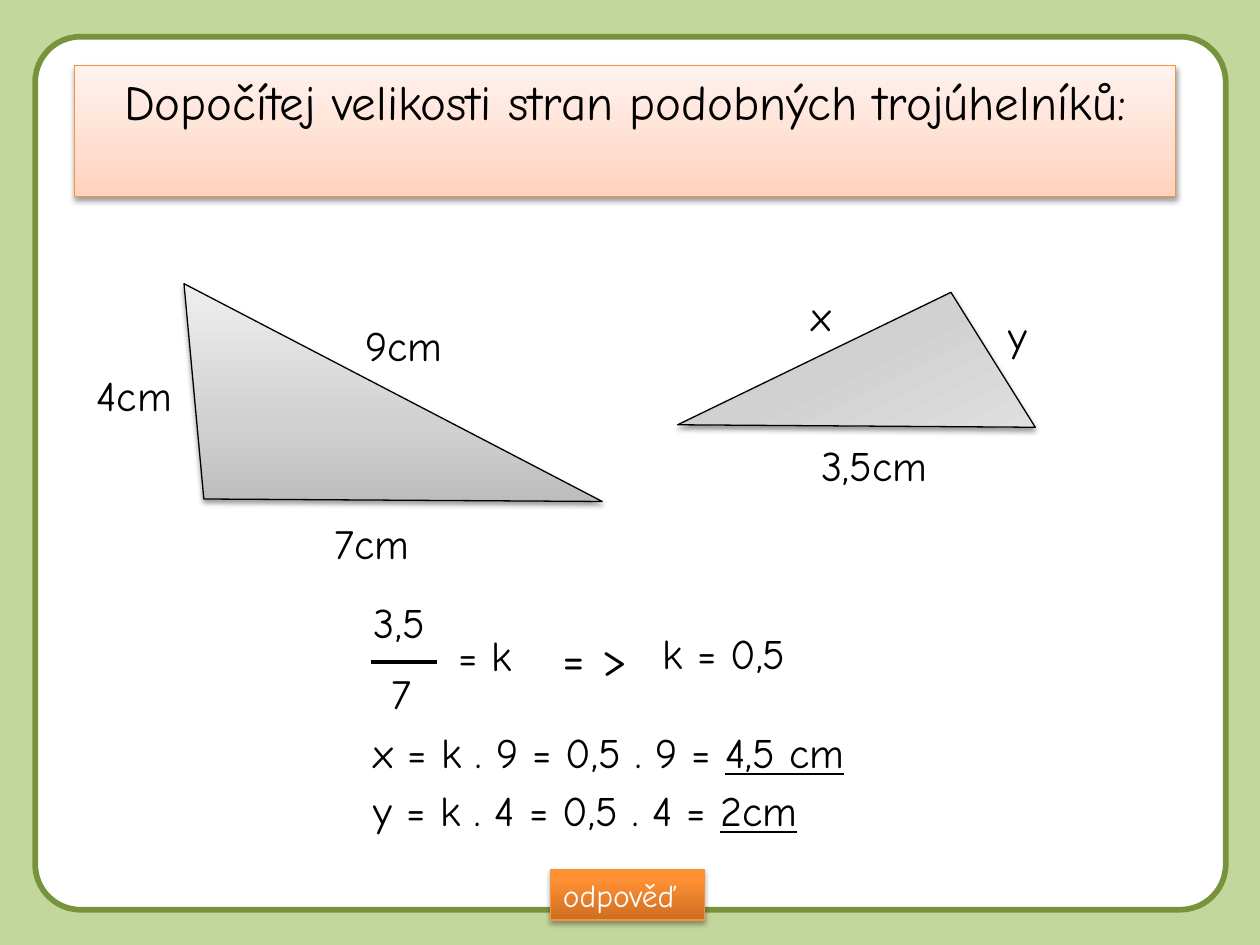
import math
from dataclasses import dataclass
from typing import Any, NamedTuple, Optional

from lxml import etree
from pptx import Presentation
from pptx.dml.color import RGBColor
from pptx.enum import shapes, text
from pptx.oxml import ns
from pptx.util import Cm, Pt


@dataclass(frozen=True)
class Theme:
    font: str = "Comic Neue"
    back: str = "C3D69B"
    edge: str = "77933C"
    white: str = "FFFFFF"
    black: str = "000000"
    rim: str = "F69240"
    peach: tuple = ((0, "FFD2BD"), (35, "FFDED0"), (100, "FFF2ED"))
    gray: tuple = ((0, "BDBDBD"), (35, "D1D1D1"), (100, "EEEEEE"))
    flame: tuple = ((0, "CC6E20"), (80, "FF9034"), (100, "FF9136"))
    head: int = 28
    body: int = 24
    small: int = 18


class Label(NamedTuple):
    words: str
    left: float
    top: float
    width: float
    high: float = 1.27
    filled: bool = True
    size: int = Theme.body


class Shade(NamedTuple):
    alpha: int = 38
    dist: float = 1.6


T = Theme()
SHADE = Shade()
RECT = shapes.MSO_SHAPE.RECTANGLE


def tint(code: str) -> RGBColor:
    return RGBColor.from_string(code)


def apply(item: Any, style: dict) -> None:
    for name, value in style.items():
        setattr(item, name, value)


def node(base: Any, tag: str, **attrs: Any) -> Any:
    return etree.SubElement(base, ns.qn(tag), {k: str(v) for k, v in attrs.items()})


def paint(shape: Any, fill: Any, line: Optional[str] = None,
          width: float = 0.75, shade: Optional[Shade] = None) -> None:
    """Fill with one colour or with stops that rise from the bottom."""
    shape.shadow.inherit = False
    if isinstance(fill, str):
        shape.fill.solid()
        shape.fill.fore_color.rgb = tint(fill)
    else:
        shape.fill.gradient()
        shape.fill.gradient_angle = 90
        stops = next(shape.element.iter(ns.qn("a:gsLst")))
        for old in list(stops):
            stops.remove(old)
        for place, code in fill:
            node(node(stops, "a:gs", pos=place * 1000), "a:srgbClr", val=code)
    if line:
        shape.line.color.rgb = tint(line)
        shape.line.width = Pt(width)
    else:
        shape.line.fill.background()
    if shade:
        effects = next(shape.element.iter(ns.qn("a:effectLst")))
        outer = node(effects, "a:outerShdw", blurRad=Pt(3.1), dist=Pt(shade.dist),
                     dir=90 * 60000, rotWithShape=0)
        color = node(outer, "a:srgbClr", val=T.black)
        node(color, "a:alpha", val=shade.alpha * 1000)


def write(shape: Any, rows: list, size: int, color: str = T.black,
          align: Any = text.PP_ALIGN.LEFT, gap: float = 0) -> None:
    """Each row is a list of (words, underlined) pairs."""
    frame = shape.text_frame
    apply(frame, {"word_wrap": True, "vertical_anchor": text.MSO_ANCHOR.TOP})
    for i, row in enumerate(rows):
        para = frame.paragraphs[0] if i == 0 else frame.add_paragraph()
        apply(para, {"alignment": align, "space_before": Pt(gap if i else 0)})
        for words, under in row:
            run = para.add_run()
            run.text = words
            apply(run.font, {"name": T.font, "size": Pt(size), "underline": under})
            run.font.color.rgb = tint(color)


def block(slide: Any, kind: Any, *box: float) -> Any:
    return slide.shapes.add_shape(kind, *map(Cm, box))


def label(slide: Any, item: Label) -> None:
    box = (item.left, item.top, item.width, item.high)
    if item.filled:
        shape = block(slide, RECT, *box)
        paint(shape, T.white)
    else:
        shape = slide.shapes.add_textbox(*map(Cm, box))
    write(shape, [[(item.words, False)]], item.size)


def turn(point: tuple, mid: tuple, angle: float) -> tuple:
    rad = math.radians(angle)
    x, y = point[0] - mid[0], point[1] - mid[1]
    return (mid[0] + x * math.cos(rad) - y * math.sin(rad),
            mid[1] + x * math.sin(rad) + y * math.cos(rad))


def triangle(slide: Any, points: list, mid: tuple = (0, 0), angle: float = 0) -> None:
    """Corners are as seen; the shape itself is turned by angle around mid."""
    first, *rest = [tuple(map(Cm, turn(p, mid, -angle))) for p in points]
    path = slide.shapes.build_freeform(*first)
    path.add_line_segments(rest, close=True)
    shape = path.convert_to_shape()
    shape.rotation = angle
    paint(shape, T.gray, T.black, shade=SHADE)


def main() -> None:
    deck = Presentation()
    apply(deck, {"slide_width": Cm(25.4), "slide_height": Cm(19.05)})
    slide = deck.slides.add_slide(deck.slide_layouts[6])
    slide.background.fill.solid()
    slide.background.fill.fore_color.rgb = tint(T.back)

    # Frame
    frame = block(slide, shapes.MSO_SHAPE.ROUNDED_RECTANGLE, 0.71, 0.74, 24, 17.6)
    frame.adjustments[0] = 0.052
    paint(frame, T.white, T.edge, 3.25)

    # Title
    title = block(slide, RECT, 1.5, 1.32, 22.2, 2.64)
    paint(title, T.peach, T.rim, shade=SHADE)
    write(title, [[("Dopočítej velikosti stran podobných trojúhelníků:", False)]],
          T.head, align=text.PP_ALIGN.CENTER)

    # Side labels, then the triangles over them
    for item in (Label("9cm", 7.11, 6.32, 2.21),
                 Label("4cm", 1.7, 7.32, 3),
                 Label("7cm", 6.5, 10.31, 2.21),
                 Label("3,5cm", 16.31, 8.74, 3.2),
                 Label("x", 16.1, 5.72, 1.19),
                 Label("y", 20.09, 6.12, 1.19)):
        label(slide, item)
    triangle(slide, [(4.11, 10.06), (12.14, 10.11), (3.71, 5.72)])
    triangle(slide, [(19.2, 5.89), (13.69, 8.56), (20.9, 8.61)], (17.28, 8.59), 154)

    # Answer button
    button = block(slide, RECT, 11.1, 17.53, 3.1, 1.02)
    paint(button, T.flame, T.rim, shade=Shade(35, 1.8))
    write(button, [[("odpověď", False)]], T.small, T.white)

    # Results
    work = slide.shapes.add_textbox(*map(Cm, (7.29, 14.53, 10.77, 2.49)))
    write(work, [[("x = k . 9 = 0,5 . 9 = ", False), ("4,5 cm", True)],
                 [("y = k . 4 = 0,5 . 4 = ", False), ("2cm", True)]], T.body, gap=4)

    # Ratio
    for item in (Label("3,5", 7.29, 11.91, 1.85),
                 Label("7", 7.65, 13.34, 1.02),
                 Label("= k", 8.99, 12.57, 2.72),
                 Label("= >", 11.1, 12.52, 2.21, 1.45, False, T.head),
                 Label("k = 0,5", 13.11, 12.52, 5.21, filled=False)):
        label(slide, item)
    bar = slide.shapes.add_connector(shapes.MSO_CONNECTOR.STRAIGHT,
                                     *map(Cm, (7.47, 13.34, 8.81, 13.34)))
    bar.line.color.rgb = tint(T.black)
    bar.line.width = Pt(2.25)
    node(bar.element.spPr, "a:effectLst")

    deck.save("out.pptx")


if __name__ == "__main__":
    main()
